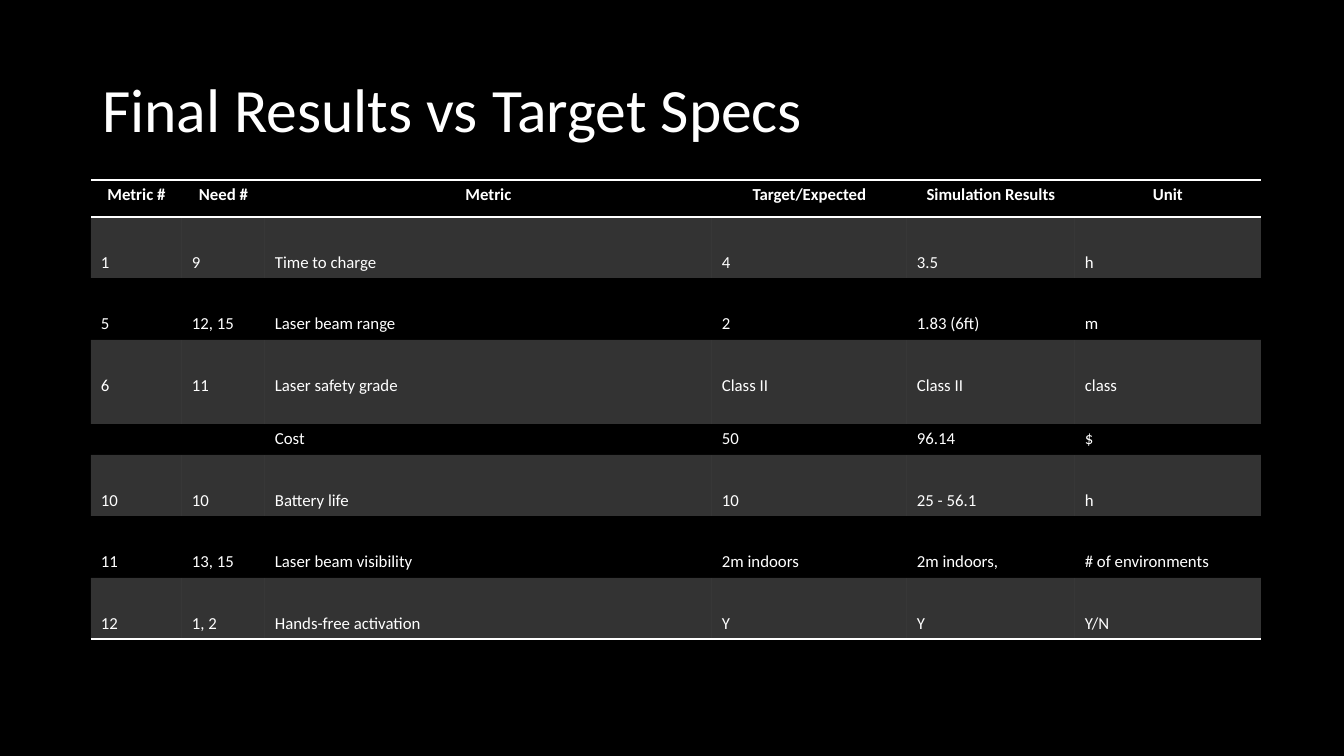
"""Build the slide that sets final results against target specs."""
from dataclasses import dataclass

from lxml import etree
from pptx import Presentation
from pptx.dml.color import RGBColor
from pptx.enum.text import MSO_ANCHOR, MSO_AUTO_SIZE, PP_ALIGN
from pptx.oxml.ns import qn
from pptx.slide import Slide
from pptx.table import Table, _Cell
from pptx.text.text import Font
from pptx.util import Emu, Pt

CENTER, LEFT, JUSTIFY = PP_ALIGN.CENTER, PP_ALIGN.LEFT, PP_ALIGN.JUSTIFY
TOP, MIDDLE = MSO_ANCHOR.TOP, MSO_ANCHOR.MIDDLE
NO_FIT = MSO_AUTO_SIZE.NONE
BLACK = RGBColor(0x00, 0x00, 0x00)
WHITE = RGBColor(0xFF, 0xFF, 0xFF)
FACE = "Calibri"
PLAIN = "{2D5ABB26-0587-4C30-8999-92F81FD0307C}"
ALPHA = 20000
SMALL = 12


@dataclass(frozen=True)
class Row:
    """One table row: its height, its inset above the text, its words."""
    height: int
    inset: int
    cells: tuple[str, ...]
    head: bool = False
    band: bool = False
    edges: tuple[str, ...] = ()


WIDTHS = (91, 83, 447, 195, 168, 186)
ROWS = (
    Row(37, 5, ("Metric #", "Need #", "Metric", "Target/Expected",
                "Simulation Results", "Unit"), head=True, edges=("a:lnT", "a:lnB")),
    Row(61, 36, ("1", "9", "Time to charge", "4", "3.5", "h"), band=True),
    Row(62, 36, ("5", "12, 15", "Laser beam range", "2", "1.83 (6ft)", "m")),
    Row(84, 36, ("6", "11", "Laser safety grade", "Class II", "Class II", "class"),
        band=True),
    Row(31, 5, ("", "", "Cost", "50", "96.14", "$")),
    Row(61, 36, ("10", "10", "Battery life", "10", "25 - 56.1", "h"), band=True),
    Row(62, 36, ("11", "13, 15", "Laser beam visibility", "2m indoors",
                 "2m indoors,", "# of environments")),
    Row(61, 36, ("12", "1, 2", "Hands-free activation", "Y", "Y", "Y/N"),
        band=True, edges=("a:lnB",)),
)


def px(count: int) -> Emu:
    """Turn px into EMU."""
    return Emu(round(count * 914400 / 100.8))


def put(item: object, values: dict[str, object]) -> None:
    """Set each named attribute of an item."""
    for name, value in values.items():
        setattr(item, name, value)


def style(font: Font, size: int, bold: bool) -> None:
    """Format a font in white."""
    put(font, {"name": FACE, "size": Pt(size), "bold": bold})
    font.color.rgb = WHITE


def edge(cell: _Cell, tags: tuple[str, ...]) -> None:
    """Rule the given sides of a cell."""
    props = cell._tc.get_or_add_tcPr()
    for spot, tag in enumerate(tags):
        line = etree.Element(qn(tag), w=str(Pt(1)))
        fill = etree.SubElement(line, qn("a:solidFill"))
        etree.SubElement(fill, qn("a:srgbClr"), val=str(WHITE))
        props.insert(spot, line)


def shade(cell: _Cell, band: bool) -> None:
    """Fill a banded cell with thin white, or clear it."""
    if not band:
        cell.fill.background()
        return
    cell.fill.solid()
    cell.fill.fore_color.rgb = WHITE
    for color in cell._tc.tcPr.iter(qn("a:srgbClr")):
        etree.SubElement(color, qn("a:alpha"), val=str(ALPHA))


def write(cell: _Cell, text: str, row: Row) -> None:
    """Write and format one cell."""
    put(cell, {"vertical_anchor": TOP, "margin_left": px(10), "margin_right": px(10),
               "margin_top": px(row.inset), "margin_bottom": px(4)})
    para = cell.text_frame.paragraphs[0]
    para.alignment = CENTER if row.head else JUSTIFY
    if text:
        run = para.add_run()
        run.text = text
        style(run.font, SMALL, row.head)
    else:
        etree.SubElement(para._p, qn("a:endParaRPr"), sz=str(SMALL * 100))
    shade(cell, row.band)
    edge(cell, row.edges)


def fill(table: Table) -> None:
    """Size the grid and fill every cell."""
    for column, width in zip(table.columns, WIDTHS):
        column.width = px(width)
    for line, row in zip(table.rows, ROWS):
        line.height = px(row.height)
        for cell, text in zip(line.cells, row.cells):
            write(cell, text, row)


def head(slide: Slide) -> None:
    """Place and format the title."""
    title = slide.shapes.title
    put(title, {"left": px(92), "top": px(40), "width": px(1160), "height": px(146)})
    frame = title.text_frame
    frame.text = "Final Results vs Target Specs"
    put(frame, {"vertical_anchor": MIDDLE, "word_wrap": True, "auto_size": NO_FIT})
    para = frame.paragraphs[0]
    put(para, {"alignment": LEFT, "line_spacing": 0.9})
    style(para.runs[0].font, 44, False)


def main() -> None:
    """Build and save the slide."""
    deck = Presentation()
    put(deck, {"slide_width": px(1344), "slide_height": px(756)})
    slide = deck.slides.add_slide(deck.slide_layouts[5])
    slide.background.fill.solid()
    slide.background.fill.fore_color.rgb = BLACK
    head(slide)
    grid = slide.shapes.add_table(
        len(ROWS), len(WIDTHS), px(91), px(180),
        px(sum(WIDTHS)), px(sum(row.height for row in ROWS)))
    for mark in grid.element.iter(qn("a:tableStyleId")):
        mark.text = PLAIN
    fill(grid.table)
    deck.save("out.pptx")


if __name__ == "__main__":
    main()
